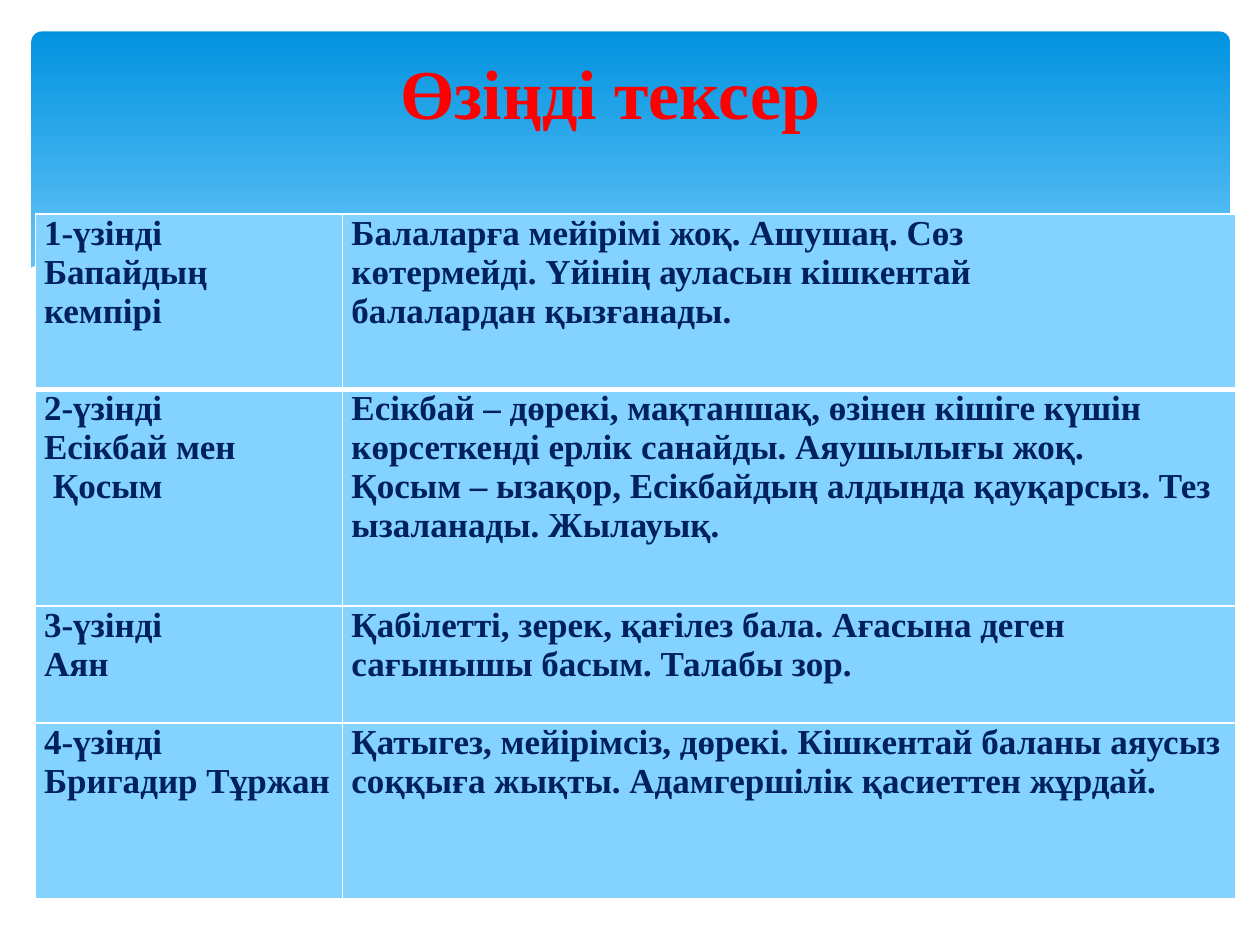
"""Build the self-check slide: a banner, a title and a table of excerpts."""
from lxml.etree import SubElement
from pptx import Presentation
from pptx.dml.color import RGBColor
from pptx.enum.shapes import MSO_SHAPE
from pptx.enum.text import MSO_ANCHOR, PP_ALIGN
from pptx.oxml.ns import qn
from pptx.util import Inches, Pt

TITLE = "Өзіңді тексер"
ROWS = [
    (1.39, ["1-үзінді", "Бапайдың кемпірі"],
     ["Балаларға мейірімі жоқ. Ашушаң. Сөз",
      "көтермейді. Үйінің ауласын кішкентай",
      "балалардан қызғанады."]),
    (1.72, ["2-үзінді", "Есікбай мен", "Қосым"],
     ["Есікбай – дөрекі, мақтаншақ, өзінен кішіге күшін көрсеткенді ерлік санайды. Аяушылығы жоқ.",
      "Қосым – ызақор, Есікбайдың алдында қауқарсыз. Тез ызаланады. Жылауық."]),
    (0.93, ["3-үзінді", "Аян"],
     ["Қабілетті, зерек, қағілез бала. Ағасына деген сағынышы басым. Талабы зор."]),
    (1.39, ["4-үзінді", "Бригадир Тұржан"],
     ["Қатыгез, мейірімсіз, дөрекі. Кішкентай баланы аяусыз",
      "соққыға жықты. Адамгершілік қасиеттен жұрдай."]),
]
INDENTED = "Қосым"
COLUMNS = (2.44, 7.09)
WAVE = [(9.77, 2.46), (9.2, 2.65), (8.5, 2.75), (7.78, 2.76), (6.88, 2.68),
        (5.79, 2.5), (4.47, 2.2), (3.4, 1.97), (2.5, 1.86), (1.77, 1.84),
        (1.19, 1.87), (0.67, 1.97), (0.23, 2.13), (0.23, 3.29), (9.77, 3.29)]
THEME = {
    "white": RGBColor.from_string("FFFFFF"),
    "deep": RGBColor.from_string("0293E0"),
    "pale": RGBColor.from_string("83D3FE"),
    "title": {"name": "Times New Roman", "size": Pt(40), "bold": True},
    "title_color": RGBColor.from_string("FF0000"),
    "body": {"name": "Times New Roman", "size": Pt(20), "bold": True},
    "body_color": RGBColor.from_string("002060"),
}


def apply_format(target, values):
    """Set each named attribute of the target."""
    for name, value in values.items():
        setattr(target, name, value)


def write_text(frame, lines, style, alignment):
    """Write one paragraph for each line in the given theme style."""
    for index, line in enumerate(lines):
        paragraph = frame.paragraphs[0] if index == 0 else frame.add_paragraph()
        paragraph.alignment = alignment
        if line == INDENTED:
            paragraph._p.get_or_add_pPr().set("marL", str(Inches(0.07)))
        run = paragraph.add_run()
        run.text = line
        apply_format(run.font, THEME[style])
        run.font.color.rgb = THEME[style + "_color"]


def add_borders(cell, widths):
    """Give a cell white borders, ahead of its fill."""
    properties = cell._tc.get_or_add_tcPr()
    for index, (side, width) in enumerate(widths.items()):
        line = SubElement(properties, qn(f"a:{side}"), w=str(Pt(width)))
        fill = SubElement(line, qn("a:solidFill"))
        SubElement(fill, qn("a:srgbClr"), val=str(THEME["white"]))
        properties.insert(index, line)


def add_banner(slide):
    """Draw the gradient banner and the white wave at its foot."""
    banner = slide.shapes.add_shape(
        MSO_SHAPE.ROUNDED_RECTANGLE, *map(Inches, (0.25, 0.25, 9.51, 2.7)))
    banner.adjustments[0] = 0.03
    banner.fill.gradient()
    banner.fill.gradient_angle = 270
    stops = zip(banner.fill.gradient_stops, (("deep", 0), ("pale", 0.9)))
    for stop, (color, position) in stops:
        stop.color.rgb = THEME[color]
        stop.position = position
    points = [(Inches(x), Inches(y)) for x, y in WAVE]
    builder = slide.shapes.build_freeform(*points[0])
    builder.add_line_segments(points[1:], close=True)
    wave = builder.convert_to_shape()
    wave.fill.solid()
    wave.fill.fore_color.rgb = THEME["white"]
    for shape in (banner, wave):
        shape.line.fill.background()
        shape.shadow.inherit = False


def add_title(slide):
    """Place the centred title."""
    frame = slide.shapes.add_textbox(*map(Inches, (2.01, 0.29, 5.67, 0.87))).text_frame
    apply_format(frame, {"word_wrap": True, "vertical_anchor": MSO_ANCHOR.MIDDLE})
    write_text(frame, [TITLE], "title", PP_ALIGN.CENTER)


def add_excerpts(slide):
    """Place the table of excerpts."""
    height = sum(row[0] for row in ROWS)
    table = slide.shapes.add_table(
        len(ROWS), len(COLUMNS),
        *map(Inches, (0.28, 1.7, sum(COLUMNS), height))).table
    apply_format(table, {"first_row": False, "horz_banding": False})
    for column, width in zip(table.columns, COLUMNS):
        column.width = Inches(width)
    for row_index, (row_height, *texts) in enumerate(ROWS):
        table.rows[row_index].height = Inches(row_height)
        for column_index, lines in enumerate(texts):
            cell = table.cell(row_index, column_index)
            apply_format(cell, {"margin_left": Inches(0.07), "margin_right": Inches(0.07),
                                "margin_top": 0, "margin_bottom": 0})
            cell.fill.solid()
            cell.fill.fore_color.rgb = THEME["pale"]
            add_borders(cell, {"lnL": 1, "lnR": 1, "lnT": 3 if row_index == 1 else 1,
                               "lnB": 3 if row_index == 0 else 1})
            justified = column_index == 0 or row_index == 0
            write_text(cell.text_frame, lines, "body",
                       PP_ALIGN.JUSTIFY if justified else PP_ALIGN.LEFT)


def main():
    """Assemble and save the presentation."""
    presentation = Presentation()
    apply_format(presentation, {"slide_width": Inches(10), "slide_height": Inches(7.5)})
    slide = presentation.slides.add_slide(presentation.slide_layouts[6])
    add_banner(slide)
    add_title(slide)
    add_excerpts(slide)
    presentation.save("out.pptx")


if __name__ == "__main__":
    main()
